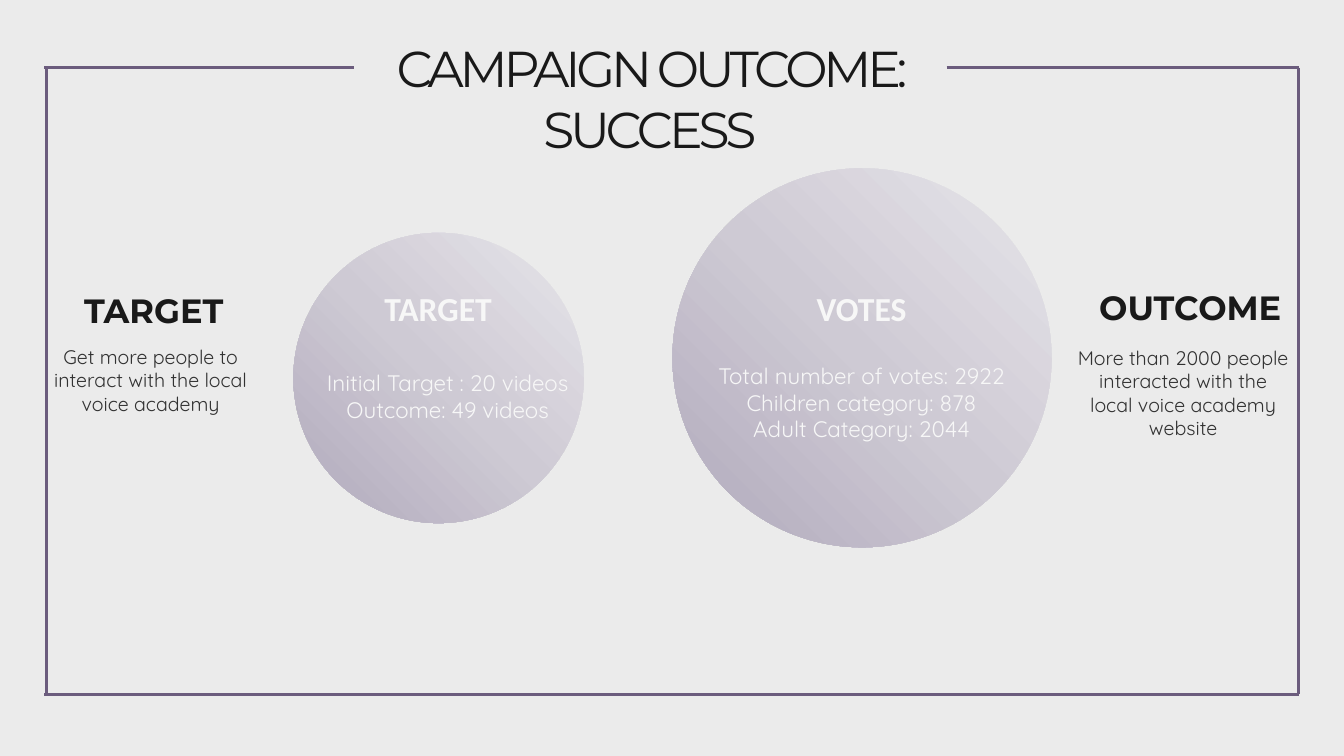
"""Build the campaign outcome slide with two gradient circles inside a frame."""
from dataclasses import dataclass

from lxml.etree import SubElement
from pptx import Presentation
from pptx.dml.color import RGBColor
from pptx.enum.shapes import MSO_CONNECTOR as Connector, MSO_SHAPE as Preset
from pptx.enum.text import MSO_AUTO_SIZE as AutoSize, PP_ALIGN as Align
from pptx.oxml.ns import qn
from pptx.slide import Slide
from pptx.util import Inches, Pt

COLORS = {
    "background": "EBEBEB",
    "frame": "6B5C7D",
    "dark": "191919",
    "body": "323232",
    "light": "F7F7F7",
    "gradient_start": "B0A8BB",
    "gradient_middle": "CECAD4",
    "gradient_end": "E7E5EA",
}
GRADIENT = {0: "gradient_start", 50: "gradient_middle", 100: "gradient_end"}


@dataclass(frozen=True)
class Style:
    font: str
    size: int
    color: str
    bold: bool = False
    spacing: int = 0


@dataclass(frozen=True)
class Label:
    left: float
    top: float
    width: float
    height: float
    style: Style
    lines: tuple[str, ...]


@dataclass(frozen=True)
class Circle:
    left: float
    top: float
    diameter: float


@dataclass(frozen=True)
class FrameLine:
    start: tuple[float, float]
    end: tuple[float, float]


TITLE = Style("Montserrat", 36, "dark", spacing=-300)
HEADING = Style("Montserrat", 24, "dark", bold=True)
CIRCLE_HEADING = Style("Calibri", 24, "light", bold=True)
CIRCLE_BODY = Style("Quicksand", 16, "light")
BODY = Style("Quicksand", 14, "body")

CIRCLES = (Circle(2.91, 2.31, 2.88), Circle(6.67, 1.67, 3.76))

LABELS = (
    Label(3.2, 0.32, 6.49, 1.31, TITLE, ("CAMPAIGN OUTCOME: SUCCESS",)),
    Label(3.2, 2.81, 2.29, 0.5, CIRCLE_HEADING, ("TARGET",)),
    Label(7.4, 2.81, 2.29, 0.5, CIRCLE_HEADING, ("VOTES",)),
    Label(3, 3.61, 2.88, 0.64, CIRCLE_BODY,
          ("Initial Target : 20 videos", "Outcome: 49 videos")),
    Label(6.89, 3.54, 3.31, 0.91, CIRCLE_BODY,
          ("Total number of votes: 2922", "Children category: 878",
           "Adult Category: 2044")),
    Label(0.38, 3.37, 2.23, 1.04, BODY,
          ("Get more people to interact with the local voice academy",)),
    Label(10.59, 3.38, 2.29, 1.28, BODY,
          ("More than 2000 people interacted with the local voice "
           "academy website",)),
    Label(0.38, 2.83, 2.29, 0.5, HEADING, ("TARGET",)),
    Label(10.66, 2.8, 2.29, 0.5, HEADING, ("OUTCOME",)),
)

LEFT, RIGHT, TOP, BOTTOM = 0.46, 12.88, 0.67, 6.89
CORNER = 0.44
FRAME = (
    FrameLine((3.51, TOP), (CORNER, TOP)),
    FrameLine((LEFT, TOP), (LEFT, BOTTOM)),
    FrameLine((9.39, TOP), (RIGHT, TOP)),
    FrameLine((RIGHT, TOP), (RIGHT, BOTTOM)),
    FrameLine((CORNER, BOTTOM), (RIGHT, BOTTOM)),
)


def color(name: str) -> RGBColor:
    return RGBColor.from_string(COLORS[name])


def draw_circle(page: Slide, circle: Circle) -> None:
    shape = page.shapes.add_shape(
        Preset.OVAL, Inches(circle.left), Inches(circle.top),
        Inches(circle.diameter), Inches(circle.diameter))
    shape.shadow.inherit = False
    shape.line.fill.background()
    shape.fill.gradient()
    gradient = shape.element.spPr.find(qn("a:gradFill"))
    for child in list(gradient):
        gradient.remove(child)
    stops = SubElement(gradient, qn("a:gsLst"))
    for percent, name in GRADIENT.items():
        stop = SubElement(stops, qn("a:gs"), pos=str(percent * 1000))
        SubElement(stop, qn("a:srgbClr"), val=COLORS[name])
    radial = SubElement(gradient, qn("a:path"), path="circle")
    SubElement(radial, qn("a:fillToRect"), t="100000", r="100000")


def draw_label(page: Slide, label: Label) -> None:
    box = page.shapes.add_textbox(
        Inches(label.left), Inches(label.top),
        Inches(label.width), Inches(label.height))
    frame = box.text_frame
    frame.word_wrap = True
    frame.auto_size = AutoSize.SHAPE_TO_FIT_TEXT
    style = label.style
    for index, line in enumerate(label.lines):
        para = frame.add_paragraph() if index else frame.paragraphs[0]
        para.alignment = Align.CENTER
        para.font.name = style.font
        para.font.size = Pt(style.size)
        para.font.bold = style.bold
        para.font.color.rgb = color(style.color)
        span = para.add_run()
        span.text = line
        if style.spacing:
            span.font._element.set("spc", str(style.spacing))


def draw_frame_line(page: Slide, line: FrameLine) -> None:
    connector = page.shapes.add_connector(
        Connector.STRAIGHT, *map(Inches, line.start + line.end))
    connector.line.color.rgb = color("frame")
    connector.line.width = Pt(2.25)
    SubElement(connector.element.spPr, qn("a:effectLst"))


def main() -> None:
    deck = Presentation()
    deck.slide_width, deck.slide_height = Inches(13.33), Inches(7.5)
    page = deck.slides.add_slide(deck.slide_layouts[6])
    page.background.fill.solid()
    page.background.fill.fore_color.rgb = color("background")
    for circle in CIRCLES:
        draw_circle(page, circle)
    for label in LABELS:
        draw_label(page, label)
    for line in FRAME:
        draw_frame_line(page, line)
    deck.save("out.pptx")


if __name__ == "__main__":
    main()
